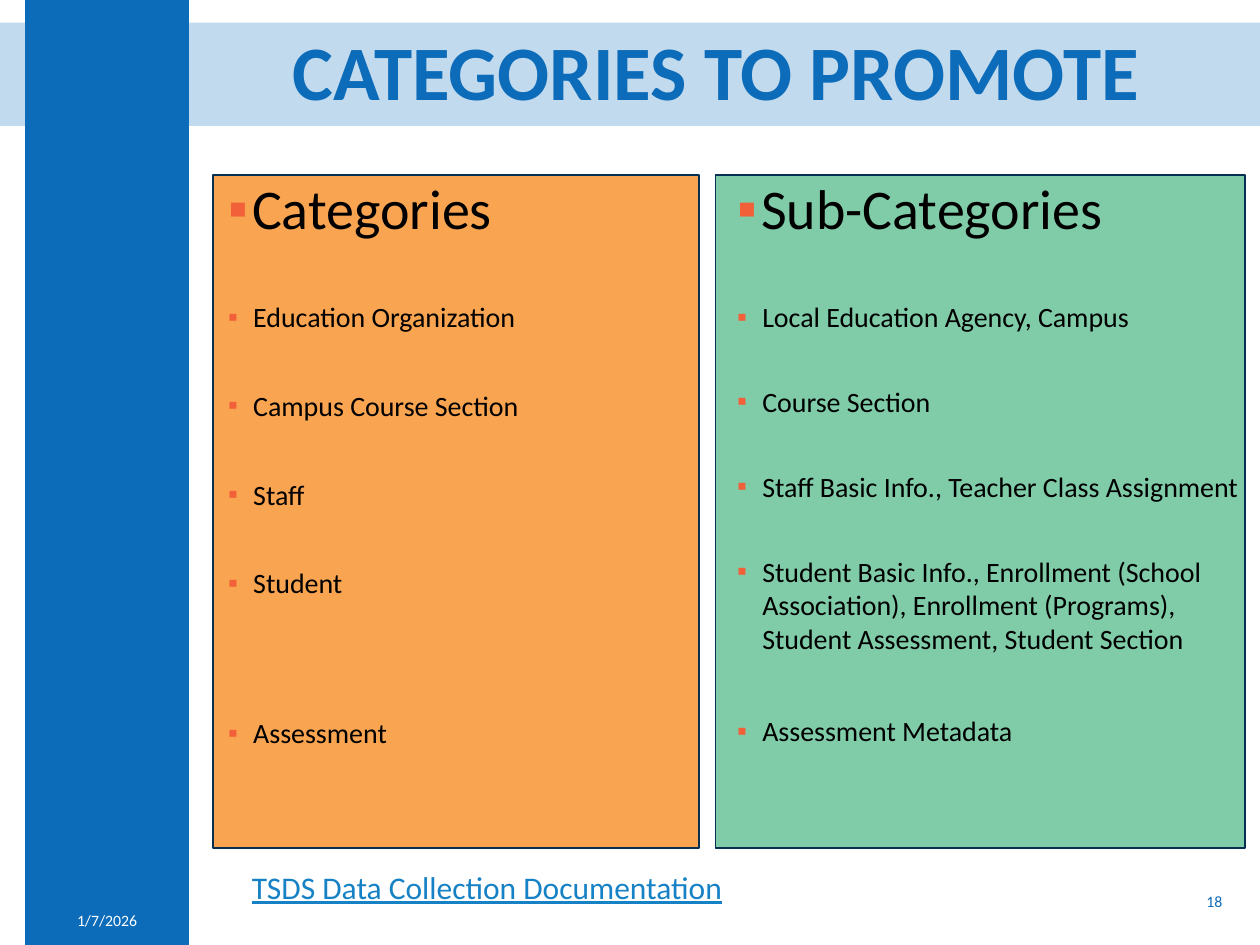
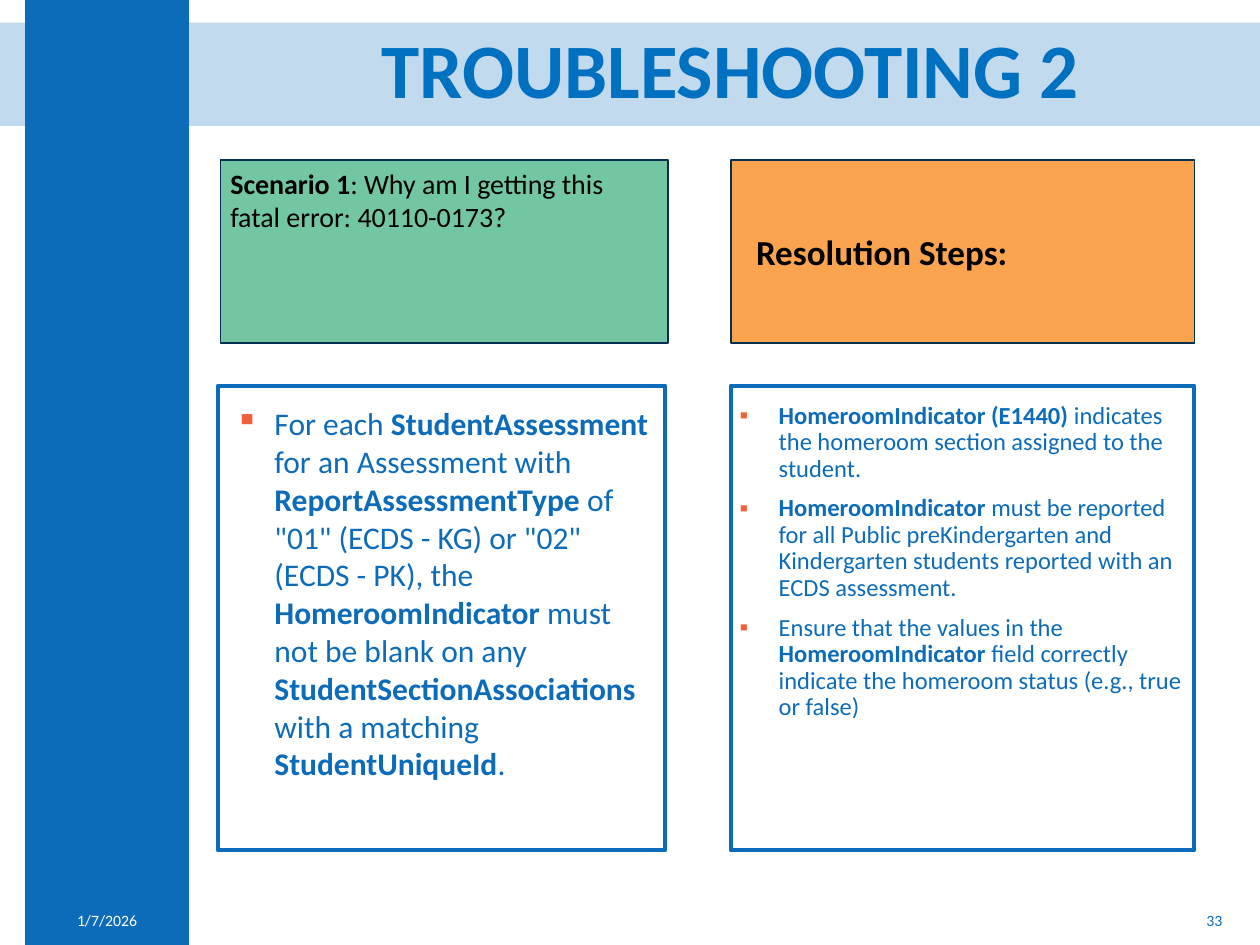
from lxml import etree
from pptx import Presentation
from pptx.dml.color import RGBColor
from pptx.enum.shapes import MSO_SHAPE
from pptx.enum.text import MSO_ANCHOR, MSO_AUTO_SIZE, PP_ALIGN
from pptx.oxml.ns import qn
from pptx.util import Inches, Pt

RECTANGLE = MSO_SHAPE.RECTANGLE
TOP, MIDDLE = MSO_ANCHOR.TOP, MSO_ANCHOR.MIDDLE
LEFT, CENTER, RIGHT = PP_ALIGN.LEFT, PP_ALIGN.CENTER, PP_ALIGN.RIGHT
NO_AUTOSIZE = MSO_AUTO_SIZE.NONE

FONT = "Calibri"
COLORS = {
    "blue": "0D6CB9", "title blue": "0070C0", "link": "1682C5",
    "navy": "062F51", "bullet": "F16038", "black": "000000", "white": "FFFFFF",
    "orange": "F9A451", "green": "80CCA8",
    "scenario green": "72C6A2", "resolution orange": "FAA450",
}
DATE = "1/7/2026"
NORMAL_INSETS = (0.1, 0.05)
TIGHT_INSETS = (0.07, 0.04)

# Each item: text, points of space before it
CATEGORY_COLUMNS = [
    {
        "panel": (1.69, 1.39, 3.86, 5.34), "fill": "orange",
        "text box": (1.71, 1.39, 3.86, 5.34),
        "heading": "Categories",
        "items": [
            ("Education Organization", 33),
            ("Campus Course Section", 31.5),
            ("Staff", 31.5),
            ("Student", 31.5),
            ("Assessment", 66.5),
        ],
    },
    {
        "panel": (5.68, 1.39, 4.2, 5.34), "fill": "green",
        "text box": (5.75, 1.39, 4.2, 4.76),
        "heading": "Sub-Categories",
        "items": [
            ("Local Education Agency, Campus", 33),
            ("Course Section", 29.3),
            ("Staff Basic Info., Teacher Class Assignment", 29.3),
            ("Student Basic Info., Enrollment (School Association), "
             "Enrollment (Programs), Student Assessment, Student Section", 29.3),
            ("Assessment Metadata", 33.5),
        ],
    },
]
DOCUMENTATION = "TSDS Data Collection Documentation"

# Double asterisks enclose bold words
SCENARIO = "**Scenario 1**: Why am I getting this fatal error: 40110-0173?"
RULE = (
    "For each **StudentAssessment** for an Assessment with "
    "**ReportAssessmentType** of \"01\" (ECDS - KG) or \"02\" (ECDS - PK), the "
    "**HomeroomIndicator** must not be blank on any "
    "**StudentSectionAssociations** with a matching **StudentUniqueId**."
)
RESOLUTION_HEADING = "**Resolution Steps:**"
RESOLUTION_STEPS = [
    "**HomeroomIndicator (E1440)** indicates the homeroom section assigned "
    "to the student.",
    "**HomeroomIndicator** must be reported for all Public preKindergarten "
    "and Kindergarten students reported with an ECDS assessment.",
    "Ensure that the values in the **HomeroomIndicator** field correctly "
    "indicate the homeroom status (e.g., true or false)",
]


def color(name):
    return RGBColor.from_string(COLORS[name])


def set_attributes(target, values):
    for name, value in values.items():
        setattr(target, name, value)


def place(shape, box):
    names = ("left", "top", "width", "height")
    set_attributes(shape, dict(zip(names, map(Inches, box))))


def add_rectangle(slide, box, fill=None, line=None, line_width=1, opacity=None):
    shape = slide.shapes.add_shape(RECTANGLE, *map(Inches, box))
    shape.shadow.inherit = False
    if fill:
        shape.fill.solid()
        shape.fill.fore_color.rgb = color(fill)
    else:
        shape.fill.background()
    if line:
        shape.line.color.rgb = color(line)
        shape.line.width = Pt(line_width)
    else:
        shape.line.fill.background()
    if opacity is not None:
        fill_color = shape.fill._xPr.find(qn("a:solidFill"))[0]
        etree.SubElement(fill_color, qn("a:alpha"), val=str(opacity * 1000))
    return shape


def format_frame(shape, anchor=TOP, insets=NORMAL_INSETS):
    side, end = map(Inches, insets)
    set_attributes(shape.text_frame, {
        "word_wrap": True, "auto_size": NO_AUTOSIZE, "vertical_anchor": anchor,
        "margin_left": side, "margin_right": side,
        "margin_top": end, "margin_bottom": end,
    })


def add_bullet(paragraph, indent):
    properties = paragraph._p.get_or_add_pPr()
    properties.set("marL", str(Inches(indent)))
    properties.set("indent", str(-Inches(indent)))
    bullet_color = etree.SubElement(properties, qn("a:buClr"))
    etree.SubElement(bullet_color, qn("a:srgbClr"), val=COLORS["bullet"])
    etree.SubElement(properties, qn("a:buChar"), char="▪")


def write(shape, text, size, text_color, align=LEFT, indent=None, before=0,
          spacing=1.0, underline=None, bold=False):
    """Fill the empty first paragraph, or add one; ** switches bold."""
    frame = shape.text_frame
    paragraph = frame.add_paragraph() if frame.text else frame.paragraphs[0]
    if indent:
        add_bullet(paragraph, indent)
    set_attributes(paragraph, {
        "alignment": align, "line_spacing": spacing,
        "space_before": Pt(before), "space_after": Pt(0),
    })
    for position, piece in enumerate(text.split("**")):
        if piece:
            run = paragraph.add_run()
            run.text = piece
            set_attributes(run.font, {
                "name": FONT, "size": Pt(size), "underline": underline,
                "bold": bold or position % 2 == 1,
            })
            run.font.color.rgb = color(text_color)


def add_label(slide, box, text, size, text_color, anchor=TOP,
              insets=NORMAL_INSETS, **text_format):
    label = slide.shapes.add_textbox(*map(Inches, box))
    format_frame(label, anchor, insets)
    write(label, text, size, text_color, **text_format)


def bring_placeholder(slide, index, box, **frame_format):
    """Place a placeholder in front of everything drawn so far."""
    placeholder = slide.placeholders[index]
    slide.shapes._spTree.append(placeholder._element)
    place(placeholder, box)
    format_frame(placeholder, **frame_format)
    return placeholder


def add_slide(presentation, layout, title, title_box, title_color, number, number_top):
    slide = presentation.slides.add_slide(presentation.slide_layouts[layout])
    add_rectangle(slide, (0, 0.18, 10, 0.82), "blue", opacity=25)
    add_rectangle(slide, (0.2, 0, 1.3, 7.5), "blue")
    add_label(slide, (0.2, 7.1, 1.3, 0.4), DATE, 9, "white", MIDDLE,
              TIGHT_INSETS, align=CENTER)
    add_label(slide, (7.55, number_top, 2.25, 0.4), number, 9, "blue", MIDDLE,
              align=RIGHT)
    heading = bring_placeholder(slide, 0, title_box, anchor=MIDDLE)
    write(heading, title, 44, title_color, CENTER, spacing=0.9, bold=True)
    return slide


def build_categories(presentation):
    slide = add_slide(presentation, 3, "CATEGORIES TO PROMOTE",
                      (1.45, 0.19, 8.47, 0.82), "blue", "18", 6.95)
    for index, column in enumerate(CATEGORY_COLUMNS, start=1):
        add_rectangle(slide, column["panel"], column["fill"], "navy")
        body = bring_placeholder(slide, index, column["text box"])
        write(body, column["heading"], 32, "black", indent=0.19, spacing=0.9)
        for text, before in column["items"]:
            write(body, text, 16, "black", indent=0.2, before=before)
    add_label(slide, (1.9, 6.84, 5.85, 0.4), DOCUMENTATION, 18, "link", underline=True)


def build_troubleshooting(presentation):
    slide = add_slide(presentation, 1, "TROUBLESHOOTING 2",
                      (1.9, 0.17, 7.8, 0.82), "title blue", "33", 7.1)
    add_rectangle(slide, (1.75, 1.27, 3.55, 1.45), "scenario green", "navy")
    add_label(slide, (1.73, 1.27, 3.5, 0.64), SCENARIO, 16, "black")

    resolution = add_rectangle(slide, (5.8, 1.27, 3.68, 1.45), "resolution orange", "navy")
    format_frame(resolution, MIDDLE, (0.2, 0.05))
    write(resolution, RESOLUTION_HEADING, 20, "black")

    for left, width in ((1.73, 3.55), (5.8, 3.68)):
        add_rectangle(slide, (left, 3.06, width, 3.69), line="blue", line_width=2.25)
    add_label(slide, (1.77, 3.16, 3.48, 3.13), RULE, 18, "blue", indent=0.31)

    body = bring_placeholder(slide, 1, (5.8, 3.16, 3.68, 3.69), insets=TIGHT_INSETS)
    for position, step in enumerate(RESOLUTION_STEPS):
        write(body, step, 14, "blue", indent=0.31, spacing=0.9,
              before=7.5 if position else 0)


def main():
    presentation = Presentation()
    presentation.slide_width = Inches(10)
    presentation.slide_height = Inches(7.5)
    build_categories(presentation)
    build_troubleshooting(presentation)
    presentation.save("out.pptx")


if __name__ == "__main__":
    main()
